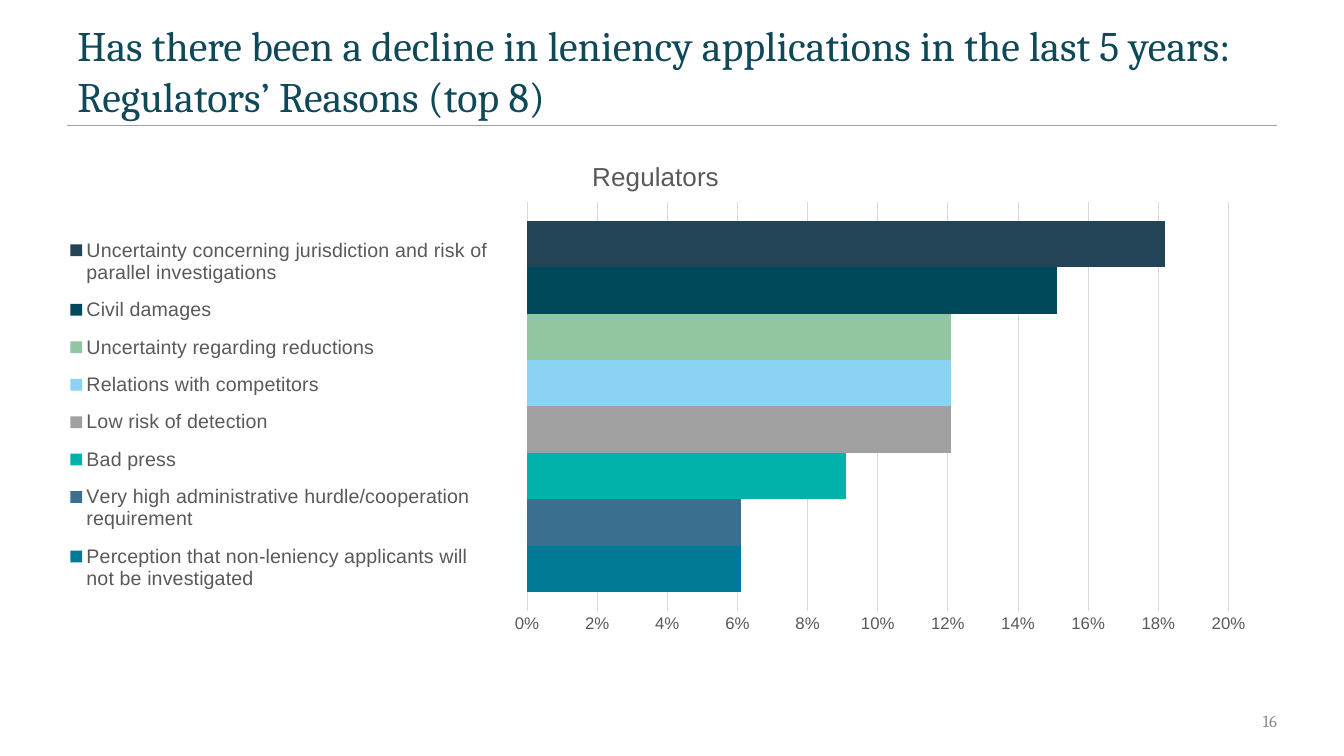
"""Build the slide on regulators' reasons for a decline in leniency applications."""
from lxml import etree
from pptx import Presentation
from pptx import util as u
from pptx.chart.data import CategoryChartData
from pptx.dml.color import RGBColor
from pptx.enum import chart as charts, shapes, text
from pptx.oxml import parse_xml
from pptx.oxml.ns import nsdecls, qn

COLORS = {
    "title": "0F4859", "rule": "A0A0A0", "number": "8C8C8C",
    "label": "595959", "grid": "D9D9D9",
}
REASONS = [
    ("Perception that non-leniency applicants will not be investigated", 0.061, "007A96"),
    ("Very high administrative hurdle/cooperation requirement", 0.061, "3A6F8F"),
    ("Bad press", 0.091, "00B2A9"),
    ("Low risk of detection", 0.121, "A0A0A0"),
    ("Relations with competitors", 0.121, "8BD3F5"),
    ("Uncertainty regarding reductions", 0.121, "90C6A2"),
    ("Civil damages", 0.151, "00495A"),
    ("Uncertainty concerning jurisdiction and risk of parallel investigations", 0.182, "234356"),
]
LEFT, WIDTH = u.Cm(1.7), u.Cm(30.48)


def style_font(font, name, size, color):
    font.name = name
    font.size = u.Pt(size)
    font.bold = False
    font.color.rgb = RGBColor.from_string(COLORS[color])


def set_layout(element, index, target="", **fractions):
    for old in element.findall(qn("c:layout")):
        element.remove(old)
    modes = '<c:xMode val="edge"/><c:yMode val="edge"/>'
    places = "".join(f'<c:{key} val="{value}"/>' for key, value in fractions.items())
    element.insert(index, parse_xml(
        f'<c:layout {nsdecls("c")}><c:manualLayout>{target}{modes}{places}'
        "</c:manualLayout></c:layout>"))


deck = Presentation()
deck.slide_width, deck.slide_height = u.Cm(33.87), u.Cm(19.05)
page = deck.slides.add_slide(deck.slide_layouts[6])

rule = page.shapes.add_connector(
    shapes.MSO_CONNECTOR.STRAIGHT, LEFT, u.Cm(3.16), LEFT + WIDTH, u.Cm(3.16))
rule.line.color.rgb = RGBColor.from_string(COLORS["rule"])
rule.line.width = u.Pt(1)
etree.SubElement(rule._element.spPr, qn("a:effectLst"))

title_box = page.shapes.add_textbox(LEFT, u.Cm(1.47), WIDTH, u.Cm(1.7))
title_frame = title_box.text_frame
title_frame.word_wrap = True
title_frame.vertical_anchor = text.MSO_ANCHOR.BOTTOM
title_frame.text = ("Has there been a decline in leniency applications in the last 5 years: "
                    "Regulators’ Reasons (top 8)")
style_font(title_frame.paragraphs[0].runs[0].font, "Cambria", 30, "title")

number_box = page.shapes.add_textbox(u.Cm(24.56), u.Cm(17.65), u.Cm(7.62), u.Cm(1.02))
number_frame = number_box.text_frame
number_frame.word_wrap = True
number_frame.vertical_anchor = text.MSO_ANCHOR.MIDDLE
number_frame.margin_right = 0
number_frame.text = "16"
number_frame.paragraphs[0].alignment = text.PP_ALIGN.RIGHT
style_font(number_frame.paragraphs[0].runs[0].font, "Cambria", 12, "number")

data = CategoryChartData(number_format="0%")
data.categories = ["1"]
for reason, share, color in REASONS:
    data.add_series(reason, [share])
chart = page.shapes.add_chart(
    charts.XL_CHART_TYPE.BAR_CLUSTERED, LEFT, u.Cm(3.61), WIDTH, u.Cm(13.54), data).chart
chart.font.name = "Arial"
chart.font.size = u.Pt(10)

plot = chart.plots[0]
plot.gap_width = 80
plot.overlap = 0
plot.vary_by_categories = False
for series, (reason, share, color) in zip(plot.series, REASONS):
    series.format.fill.solid()
    series.format.fill.fore_color.rgb = RGBColor.from_string(color)

chart.category_axis.visible = False
axis = chart.value_axis
axis.minimum_scale, axis.maximum_scale, axis.major_unit = 0, 0.2, 0.02
axis.major_tick_mark = charts.XL_TICK_MARK.NONE
axis.minor_tick_mark = charts.XL_TICK_MARK.NONE
axis.tick_labels.number_format = "0%"
axis.tick_labels.number_format_is_linked = False
style_font(axis.tick_labels.font, "Arial", 12, "label")
axis.format.line.fill.background()
axis.major_gridlines.format.line.color.rgb = RGBColor.from_string(COLORS["grid"])
axis.major_gridlines.format.line.width = u.Pt(0.75)

chart.has_title = True
chart.chart_title.text_frame.text = "Regulators"
style_font(chart.chart_title.text_frame.paragraphs[0].runs[0].font, "Arial", 18.6, "label")
chart.chart_title.include_in_layout = False

chart.has_legend = True
chart.legend.position = charts.XL_LEGEND_POSITION.LEFT
chart.legend.include_in_layout = False
style_font(chart.legend.font, "Arial", 14, "label")

set_layout(chart.chart_title._element, 1, x=0.43, y=0.02)
set_layout(chart.legend._element, 1, x=0.0, y=0.15, w=0.35, h=0.71)
set_layout(chart._chartSpace.chart.plotArea, 0, '<c:layoutTarget val="inner"/>',
           x=0.38, y=0.11, w=0.58, h=0.76)

deck.save("out.pptx")
